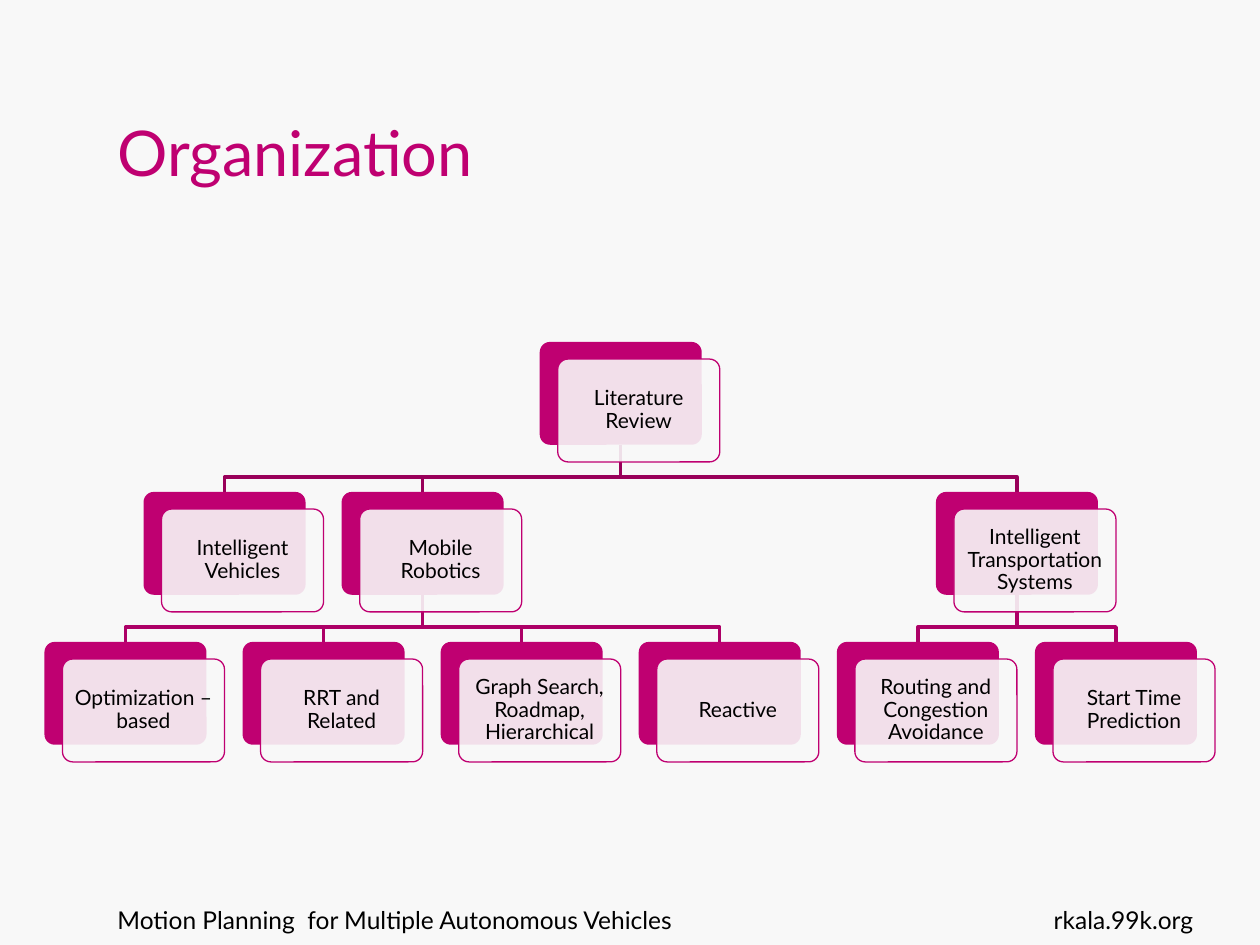
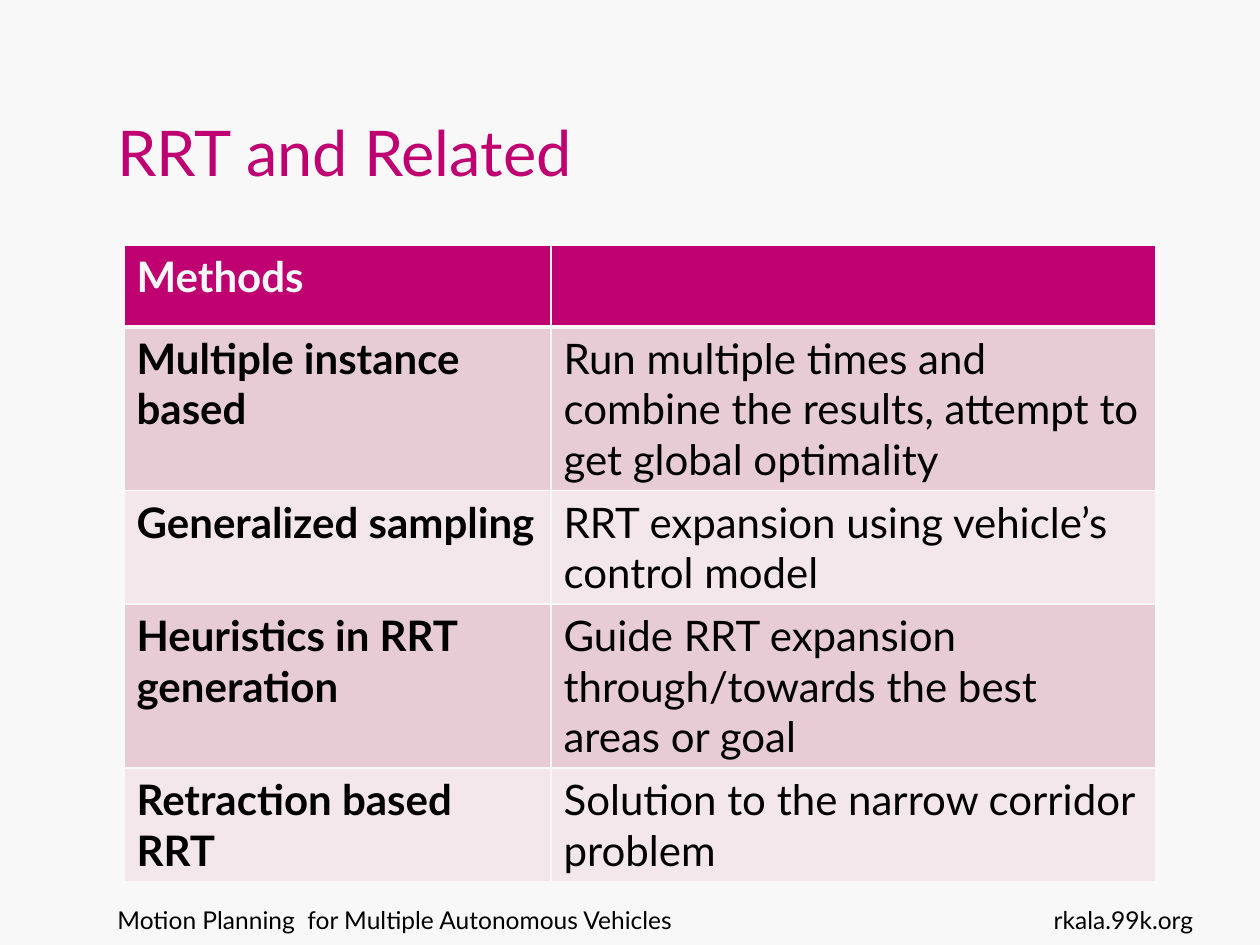
from lxml.etree import SubElement
from pptx import Presentation
from pptx.dml.color import RGBColor
from pptx.enum.shapes import MSO_SHAPE as Preset
from pptx.enum.text import MSO_ANCHOR as Anchor, PP_ALIGN as Align
from pptx.oxml.ns import qn
from pptx.util import Pt

MAGENTA, PAPER, INK = "BF0071", "F8F8F8", "000000"
BRANCH_COLOURS = ["99005A", "AD0067"]
BAND_COLOURS = ["E8CCD5", "F4E7EB"]
FONT = "Lato"

SLOT_PITCH, LEVEL_PITCH = 113.2, 85.7
TREE_LEFT, TREE_TOP = 25.4, 195.4
CARD_WIDTH, CARD_HEIGHT = 92.6, 58.8
FRONT_SHIFT_X, FRONT_SHIFT_Y = 10.3, 9.8
BEND_DROP = 18.4

ORGANIZATION = ("Literature Review", [
    ("Intelligent Vehicles", []),
    ("Mobile Robotics", [
        ("Optimization –based", []),
        ("RRT and Related", []),
        ("Graph Search, Roadmap, Hierarchical", []),
        ("Reactive", []),
    ]),
    ("Intelligent Transportation Systems", [
        ("Routing and Congestion Avoidance", []),
        ("Start Time Prediction", []),
    ]),
])
SLOTS = {
    "Literature Review": 2.5,
    "Intelligent Vehicles": 0.5,
    "Mobile Robotics": 1.5,
    "Intelligent Transportation Systems": 4.5,
    "Optimization –based": 0,
    "RRT and Related": 1,
    "Graph Search, Roadmap, Hierarchical": 2,
    "Reactive": 3,
    "Routing and Congestion Avoidance": 4,
    "Start Time Prediction": 5,
}

METHODS = [
    ("Methods", ""),
    ("Multiple instance based",
     "Run multiple times and combine the results, attempt to get global optimality"),
    ("Generalized sampling", "RRT expansion using vehicle’s control model"),
    ("Heuristics in RRT generation",
     "Guide RRT expansion through/towards the best areas or goal"),
    ("Retraction based RRT", "Solution to the narrow corridor problem"),
]


def colour(hex_code):
    return RGBColor.from_string(hex_code)


def write(frame, text, size=14, ink=INK, bold=False, align=Align.LEFT, spacing=None):
    paragraph = frame.paragraphs[0]
    paragraph.alignment = align
    paragraph.line_spacing = spacing
    run = paragraph.add_run()
    run.text = text
    run.font.name, run.font.size, run.font.bold = FONT, Pt(size), bold
    run.font.color.rgb = colour(ink)


def border(cell, side, width):
    line = SubElement(cell._tc.get_or_add_tcPr(), qn(f"a:ln{side}"), w=str(Pt(width)))
    SubElement(SubElement(line, qn("a:solidFill")), qn("a:srgbClr"), val=PAPER)


class Deck:
    """Holds the shared style and the slide being filled."""

    def __init__(self):
        self.presentation = Presentation()
        self.presentation.slide_width, self.presentation.slide_height = Pt(720), Pt(540)
        self.slide = None

    def start_slide(self, title):
        self.slide = self.presentation.slides.add_slide(self.presentation.slide_layouts[6])
        self.slide.background.fill.solid()
        self.slide.background.fill.fore_color.rgb = colour(PAPER)
        self.label(60, 513.4, 499, 26, "Motion Planning  for Multiple Autonomous Vehicles")
        self.label(60, 21.6, 487, 90, title, anchor=Anchor.BOTTOM, size=36, ink=MAGENTA)
        self.label(581, 513.4, 108, 26, "rkala.99k.org", align=Align.RIGHT)

    def label(self, left, top, width, height, text, anchor=Anchor.TOP, **style):
        frame = self.slide.shapes.add_textbox(
            Pt(left), Pt(top), Pt(width), Pt(height)).text_frame
        frame.word_wrap = True
        frame.vertical_anchor = anchor
        write(frame, text, **style)

    def rounded(self, left, top, fill):
        card = self.slide.shapes.add_shape(
            Preset.ROUNDED_RECTANGLE, Pt(left), Pt(top), Pt(CARD_WIDTH), Pt(CARD_HEIGHT))
        card.adjustments[0] = 0.1
        card.shadow.inherit = False
        card.fill.solid()
        card.fill.fore_color.rgb = colour(fill)
        card.line.fill.background()
        return card

    def card(self, left, top, text):
        self.rounded(left, top, MAGENTA)
        front = self.rounded(left + FRONT_SHIFT_X, top + FRONT_SHIFT_Y, PAPER)
        paint = front._element.spPr.find(qn("a:solidFill"))
        SubElement(paint[0], qn("a:alpha"), val="90000")
        front.line.color.rgb = colour(MAGENTA)
        front.line.width = Pt(0.75)
        frame = front.text_frame
        frame.word_wrap = True
        frame.vertical_anchor = Anchor.MIDDLE
        frame.margin_left = frame.margin_right = Pt(3.4)
        frame.margin_top = frame.margin_bottom = Pt(3.4)
        write(frame, text, size=12, align=Align.CENTER, spacing=0.9)

    def elbow(self, start_x, start_y, end_x, end_y, ink):
        bend_y = start_y + BEND_DROP
        outline = self.slide.shapes.build_freeform(Pt(start_x), Pt(start_y), scale=1.0)
        corners = [(start_x, bend_y), (end_x, bend_y), (end_x, end_y)]
        outline.add_line_segments([(Pt(x), Pt(y)) for x, y in corners], close=False)
        branch = outline.convert_to_shape()
        branch.shadow.inherit = False
        branch.fill.background()
        branch.line.color.rgb = colour(ink)
        branch.line.width = Pt(2)

    def branches(self, node, level=0):
        name, children = node
        parent_left, parent_top = place(name, level)
        for child in children:
            self.branches(child, level + 1)
            child_left, child_top = place(child[0], level + 1)
            self.elbow(parent_left + CARD_WIDTH / 2, parent_top + CARD_HEIGHT,
                       child_left + CARD_WIDTH / 2, child_top, BRANCH_COLOURS[level])

    def cards(self, node, level=0):
        name, children = node
        self.card(*place(name, level), name)
        for child in children:
            self.cards(child, level + 1)

    def table(self, left, top, column_widths, row_height, rows):
        grid = self.slide.shapes.add_table(
            len(rows), len(column_widths), Pt(left), Pt(top),
            Pt(sum(column_widths)), Pt(row_height * len(rows))).table
        for column, width in zip(grid.columns, column_widths):
            column.width = Pt(width)
        for row_index, row in enumerate(rows):
            grid.rows[row_index].height = Pt(row_height)
            header = row_index == 0
            for column_index, text in enumerate(row):
                cell = grid.cell(row_index, column_index)
                for side in "LR":
                    border(cell, side, 1)
                border(cell, "T", 3 if row_index == 1 else 1)
                border(cell, "B", 3 if header else 1)
                cell.fill.solid()
                cell.fill.fore_color.rgb = colour(
                    MAGENTA if header else BAND_COLOURS[(row_index - 1) % 2])
                if text:
                    write(cell.text_frame, text, size=24, ink=PAPER if header else INK,
                          bold=column_index == 0)


def place(name, level):
    return TREE_LEFT + SLOTS[name] * SLOT_PITCH, TREE_TOP + level * LEVEL_PITCH


def main():
    deck = Deck()
    deck.start_slide("Organization")
    deck.branches(ORGANIZATION)
    deck.cards(ORGANIZATION)
    deck.start_slide("RRT and Related")
    deck.table(70.9, 140, [244, 345.6], 46.8, METHODS)
    deck.presentation.save("out.pptx")


if __name__ == "__main__":
    main()
